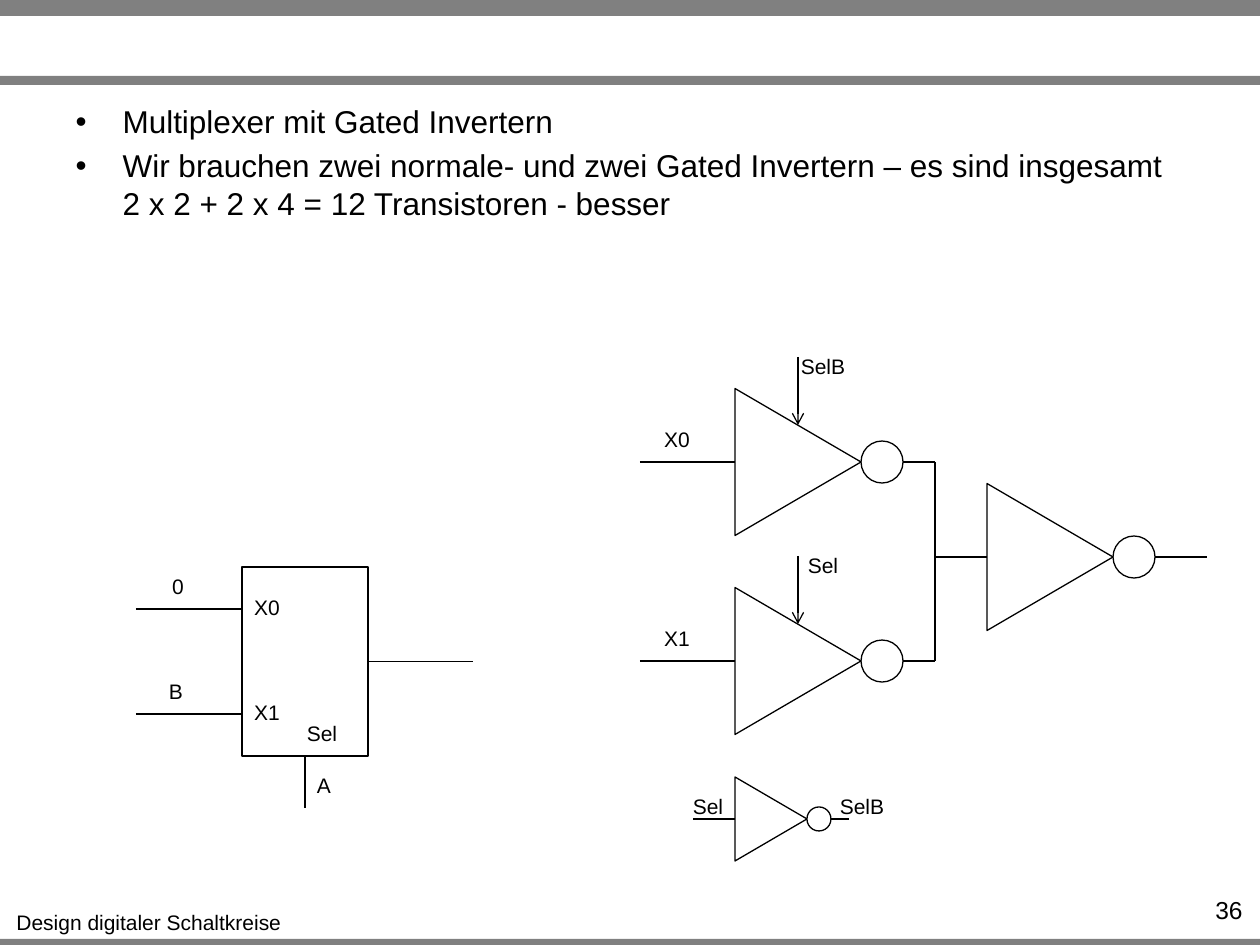
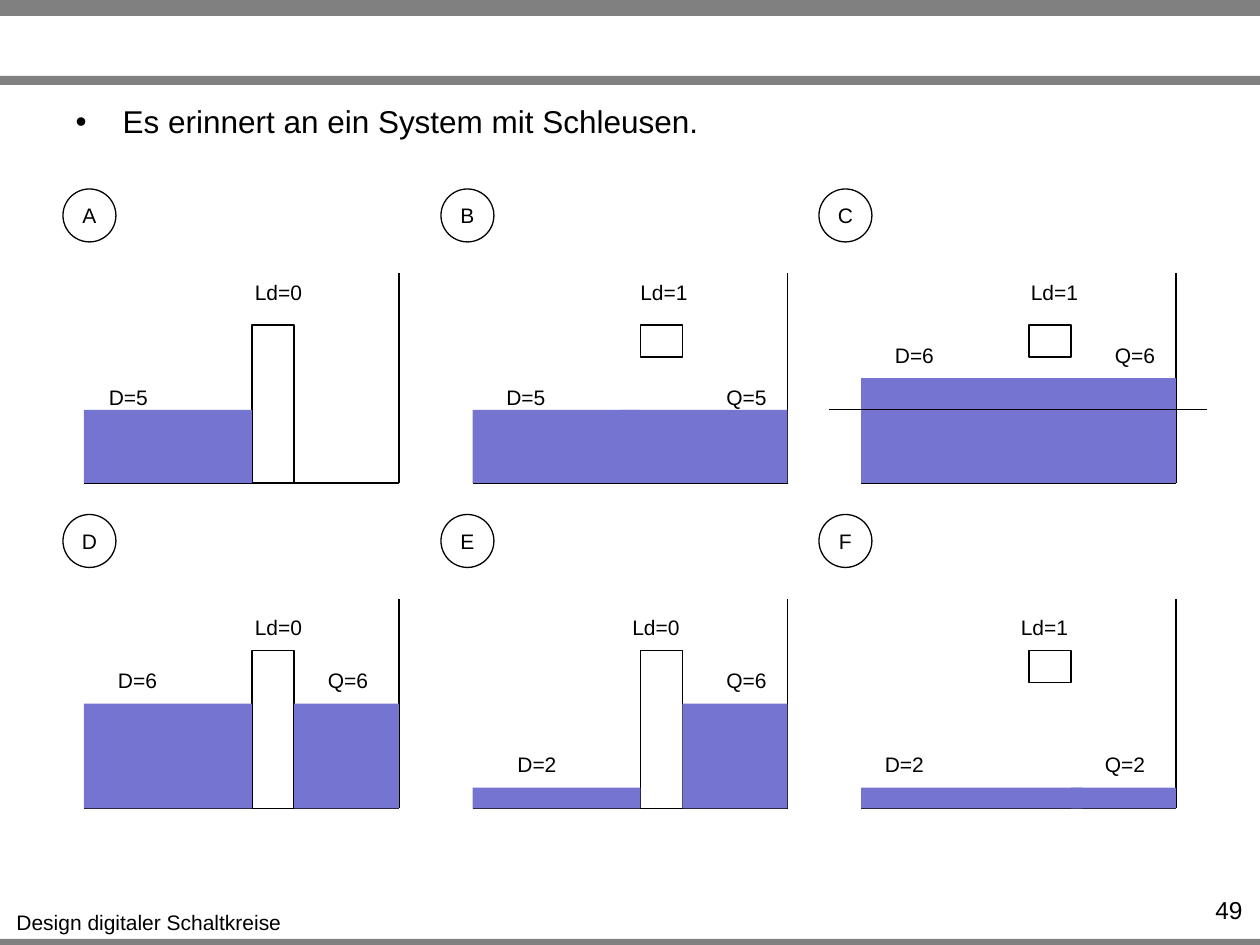
from lxml import etree
from pptx import Presentation
from pptx import util as u
from pptx.dml.color import RGBColor
from pptx.enum import shapes, text
from pptx.oxml import ns

PX = 914400 / 126
FONT = "Arial"
COLORS = {"ink": "000000", "band": "808080", "water": "7575D1", "paper": "FFFFFF"}
BANDS = [(939, 9), (0, 16), (76, 9)]
LABEL_HEIGHT = 38
# Arial advance widths in thousandths of the type size
ADVANCES = {"A": 667, "B": 667, "D": 722, "L": 556, "Q": 778, "S": 667, "X": 667,
            "d": 556, "e": 556, "l": 222, "=": 584}
DIGIT_ADVANCE = 556

# Water level: (height of the water, rise of its label above the floor)
LEVELS = {2: (21, 63), 5: (73, 105), 6: (105, 147)}
# Letter, Ld, Ld label x, (D, label x, water width), (Q, label x, water x)
LOCKS = [
    ("A", 0, 158, (5, 12, 168), None),
    ("B", 1, 155, (5, 21, 168), (5, 241, 147)),
    ("C", 1, 157, (6, 21, 168), (6, 241, 147)),
    ("D", 0, 158, (6, 21, 168), (6, 231, 210)),
    ("E", 0, 147, (2, 32, 168), (6, 241, 210)),
    ("F", 1, 147, (2, 11, 221), (2, 231, 210)),
]
BASIN_WIDTH = 315


def emu(px):
    return u.Emu(round(px * PX))


def color(name):
    return RGBColor.from_string(COLORS[name])


def style_runs(paragraph, size):
    for run in paragraph.runs:
        run.font.name = FONT
        run.font.size = u.Pt(size)
        run.font.color.rgb = color("ink")


def draw(slide, preset, left, top, width, height, fill=None, outlined=True):
    shape = slide.shapes.add_shape(preset, *map(emu, (left, top, width, height)))
    shape.shadow.inherit = False
    if fill:
        shape.fill.solid()
        shape.fill.fore_color.rgb = color(fill)
    else:
        shape.fill.background()
    if outlined:
        shape.line.color.rgb = color("ink")
        shape.line.width = u.Pt(0.75)
    else:
        shape.line.fill.background()
    return shape


def wire(slide, x1, y1, x2, y2, arrow=False):
    connector = slide.shapes.add_connector(
        shapes.MSO_CONNECTOR.STRAIGHT, *map(emu, (x1, y1, x2, y2)))
    connector.line.color.rgb = color("ink")
    connector.line.width = u.Pt(0.75)
    if arrow:
        etree.SubElement(connector.line._get_or_add_ln(), ns.qn("a:tailEnd"), type="arrow")
    etree.SubElement(connector._element.spPr, ns.qn("a:effectLst"))
    return connector


def text_box(slide, words, left, top, width, height, size, align):
    box = slide.shapes.add_textbox(*map(emu, (left, top, width, height)))
    box.text_frame.text = words
    paragraph = box.text_frame.paragraphs[0]
    paragraph.alignment = align
    style_runs(paragraph, size)
    return box


def label(slide, words, left, top, width=None):
    """Unwrapped 12 pt label; its box fits the words unless a width is given."""
    if width is None:
        width = 26 + round(sum(ADVANCES.get(c, DIGIT_ADVANCE) for c in words) * 0.021)
    box = text_box(slide, words, left, top, width, LABEL_HEIGHT, 12, text.PP_ALIGN.CENTER)
    box.text_frame.word_wrap = False
    box.text_frame.auto_size = text.MSO_AUTO_SIZE.SHAPE_TO_FIT_TEXT


def add_frame_slide(prs, number, bullets):
    """Slide with the grey bands, footer, page number and bullet list."""
    slide = prs.slides.add_slide(prs.slide_layouts.get_by_name("Title and Content"))
    title = slide.shapes.title._element
    title.getparent().remove(title)
    for top, height in BANDS:
        draw(slide, shapes.MSO_SHAPE.RECTANGLE, 0, top, 1260, height, "band", False)
    label(slide, "Design digitaler Schaltkreise", 3, 903, 292)
    text_box(slide, number, 1146, 889, 109, 30, 14, text.PP_ALIGN.RIGHT)
    fill_bullets(slide.placeholders[1], bullets)
    return slide


def fill_bullets(body, bullets):
    body.left, body.top, body.width, body.height = map(emu, (63, 96, 1134, 93))
    frame = body.text_frame
    frame.text = "\n".join(bullets)
    frame.auto_size = text.MSO_AUTO_SIZE.NONE
    for i, paragraph in enumerate(frame.paragraphs):
        properties = paragraph._p.get_or_add_pPr()
        properties.set("marL", str(emu(47)))
        properties.set("indent", str(-emu(47)))
        etree.SubElement(properties, ns.qn("a:buFont"), typeface=FONT)
        etree.SubElement(properties, ns.qn("a:buChar"), char="•")
        paragraph.space_before = u.Pt(3.6 if i else 0)
        style_runs(paragraph, 18)


def draw_multiplexer(slide, left, top):
    """Block symbol; left is where the input wires start."""
    block = draw(slide, shapes.MSO_SHAPE.RECTANGLE, left + 106, top, 126, 189)
    for port, signal, signal_x, y in [("X0", "0", 23, 42), ("X1", "B", 20, 147)]:
        wire(slide, left, top + y, left + 106, top + y)
        label(slide, port, left + 105, top + y - 21)
        label(slide, signal, left + signal_x, top + y - 42)
    output = wire(slide, left + 232, top + 94, left + 337, top + 94)
    output.begin_connect(block, 3)
    output.end_y = output.begin_y
    select = wire(slide, left + 169, top + 241, left + 169, top + 189)
    select.end_connect(block, 2)
    select.begin_x = select.end_x
    label(slide, "Sel", left + 158, top + 147)
    label(slide, "A", left + 168, top + 199)


def draw_inverter(slide, left, axis, lead_in, lead_out, depth=126):
    """Triangle with its flat side at left, a bubble and two leads on the axis."""
    height, bubble = depth * 7 // 6, depth // 3
    tip = left + depth
    wire(slide, left - lead_in, axis, left, axis)
    triangle = draw(slide, shapes.MSO_SHAPE.ISOSCELES_TRIANGLE,
                    left + (depth - height) / 2, axis - depth / 2, height, depth)
    triangle.rotation = 90
    draw(slide, shapes.MSO_SHAPE.OVAL, tip, axis - bubble / 2, bubble, bubble, "paper")
    wire(slide, tip + bubble, axis, tip + bubble + lead_out, axis)


def draw_gated_inverter(slide, left, axis, signal, select, select_x):
    draw_inverter(slide, left, axis, 95, 32)
    wire(slide, left + 63, axis - 105, left + 63, axis - 37, arrow=True)
    label(slide, select, left + select_x, axis - 115)
    label(slide, signal, left - 84, axis - 42)


def draw_gate_circuit(slide, left, top):
    """Two gated inverters joined into an output inverter, plus the Sel inverter."""
    gates = left + 95
    upper, lower, output = top + 105, top + 304, top + 200
    draw_gated_inverter(slide, gates, upper, "X0", "SelB", 53)
    draw_gated_inverter(slide, gates, lower, "X1", "Sel", 60)
    wire(slide, gates + 200, upper, gates + 200, lower)
    draw_inverter(slide, gates + 252, output, 52, 52)
    draw_inverter(slide, gates, top + 462, 42, 18, depth=72)
    label(slide, "Sel", left + 40, top + 430)
    label(slide, "SelB", left + 187, top + 430)


def draw_badge(slide, letter, left, top):
    badge = draw(slide, shapes.MSO_SHAPE.OVAL, left, top, 53, 53)
    frame = badge.text_frame
    frame.text = letter
    frame.word_wrap = False
    frame.vertical_anchor = text.MSO_ANCHOR.MIDDLE
    frame.paragraphs[0].alignment = text.PP_ALIGN.CENTER
    style_runs(frame.paragraphs[0], 12)


def draw_water(slide, name, level, left, floor, label_x, water_x, width):
    height, rise = LEVELS[level]
    draw(slide, shapes.MSO_SHAPE.RECTANGLE, left + water_x, floor - height,
         width, height, "water", False)
    label(slide, f"{name}={level}", left + label_x, floor - rise)


def draw_lock(slide, left, floor, load, load_x, load_rise, inflow, outflow):
    """Basin with a gate, closed to the floor at Ld=0 and raised at Ld=1."""
    right = left + BASIN_WIDTH
    draw(slide, shapes.MSO_SHAPE.RECTANGLE, left + 168, floor - 158, 42, 32 if load else 158)
    wire(slide, left, floor, right, floor)
    wire(slide, right, floor, right, floor - 210)
    level, label_x, width = inflow
    draw_water(slide, "D", level, left, floor, label_x, 0, width)
    if outflow:
        level, label_x, water_x = outflow
        draw_water(slide, "Q", level, left, floor, label_x, water_x, BASIN_WIDTH - water_x)
    label(slide, f"Ld={load}", left + load_x, floor - load_rise)


def build_multiplexer_slide(prs):
    slide = add_frame_slide(prs, "36", [
        "Multiplexer mit Gated Invertern",
        "Wir brauchen zwei normale- und zwei Gated Invertern – es sind insgesamt "
        "2 x 2 + 2 x 4 = 12 Transistoren - besser"])
    draw_multiplexer(slide, 136, 567)
    draw_gate_circuit(slide, 640, 357)


def build_locks_slide(prs):
    slide = add_frame_slide(prs, "49", ["Es erinnert an ein System mit Schleusen."])
    for i, (letter, load, load_x, inflow, outflow) in enumerate(LOCKS):
        row, column = divmod(i, 3)
        floor = 483 + 325.5 * row
        draw_lock(slide, 84 + 388.5 * column, floor, load, load_x,
                  210 - 10 * row, inflow, outflow)
        draw_badge(slide, letter, 63 + 378 * column, floor - 294)
    wire(slide, 829, 409.5, 1207, 409.5)


def main():
    prs = Presentation()
    prs.slide_width, prs.slide_height = emu(1260), emu(945)
    build_multiplexer_slide(prs)
    build_locks_slide(prs)
    prs.save("out.pptx")


if __name__ == "__main__":
    main()
